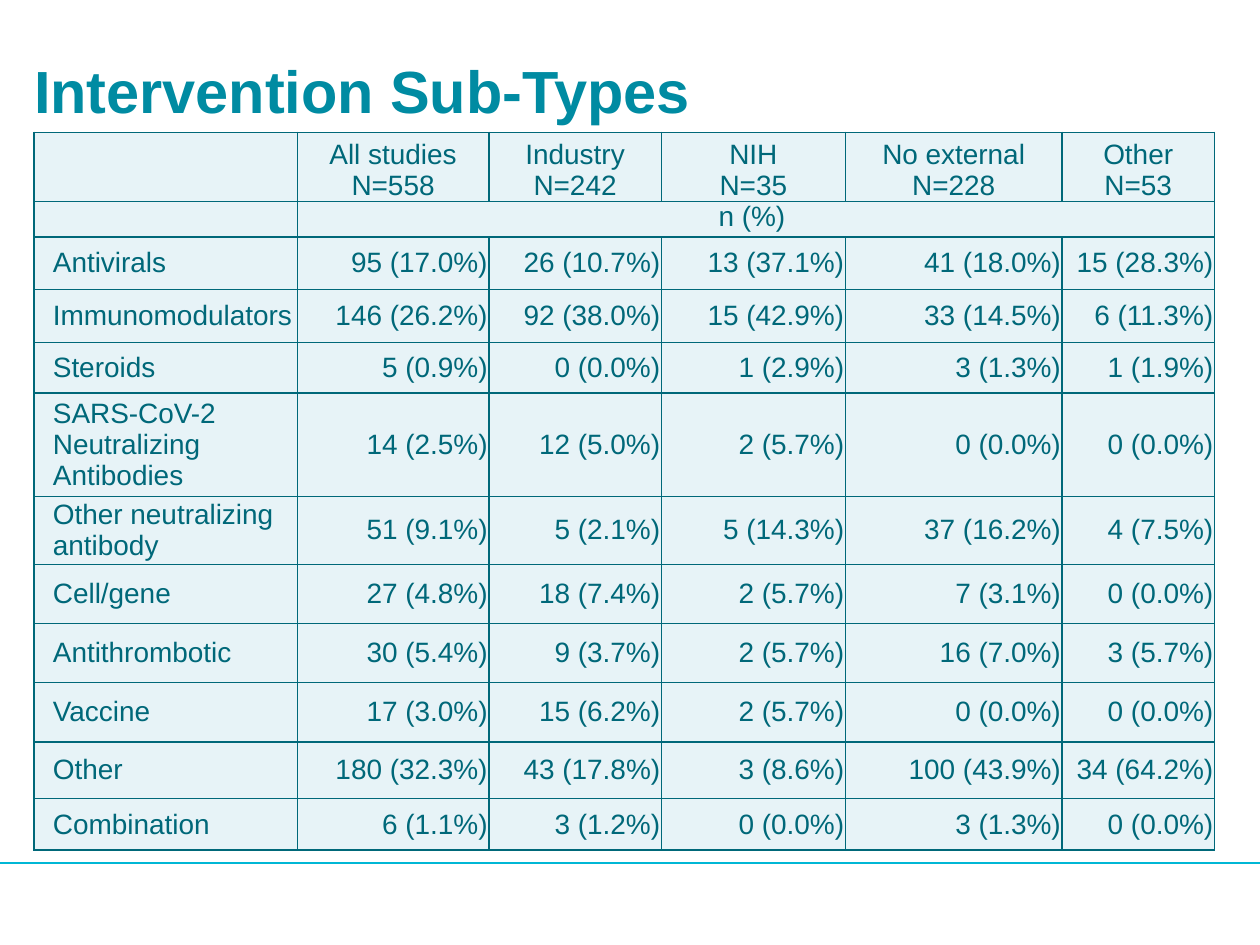
from lxml.etree import SubElement
from pptx import Presentation
from pptx.dml.color import RGBColor
from pptx.enum.shapes import MSO_CONNECTOR, MSO_SHAPE
from pptx.enum.text import MSO_ANCHOR, PP_ALIGN
from pptx.oxml import parse_xml
from pptx.oxml.ns import nsdecls, qn
from pptx.util import Inches, Pt

TITLE_COLOR, TEXT_COLOR = "008BA2", "006879"
CELL_COLOR, RULE_COLOR = "E7F3F7", "00B7D5"
COLUMN_WIDTHS = [2.09, 1.52, 1.37, 1.46, 1.72, 1.21]
ROW_HEIGHTS = [0.55, 0.28, 0.42, 0.42, 0.4, 0.82, 0.54, 0.47, 0.47, 0.47, 0.45, 0.41]
HEADERS = ["", "All studies\vN=558", "Industry\vN=242", "NIH\vN=35",
           "No external\vN=228", "Other\vN=53"]
UNIT = "n (%) "
STUDIES = [
    ["Antivirals", "95 (17.0%)", "26 (10.7%)", "13 (37.1%)", "41 (18.0%)", "15 (28.3%)"],
    ["Immunomodulators", "146 (26.2%)", "92 (38.0%)", "15 (42.9%)", "33 (14.5%)", "6 (11.3%)"],
    ["Steroids", "5 (0.9%)", "0 (0.0%)", "1 (2.9%)", "3 (1.3%)", "1 (1.9%)"],
    ["SARS-CoV-2 Neutralizing Antibodies",
     "14 (2.5%)", "12 (5.0%)", "2 (5.7%)", "0 (0.0%)", "0 (0.0%)"],
    ["Other neutralizing antibody",
     "51 (9.1%)", "5 (2.1%)", "5 (14.3%)", "37 (16.2%)", "4 (7.5%)"],
    ["Cell/gene", "27 (4.8%)", "18 (7.4%)", "2 (5.7%)", "7 (3.1%)", "0 (0.0%)"],
    ["Antithrombotic", "30 (5.4%)", "9 (3.7%)", "2 (5.7%)", "16 (7.0%)", "3 (5.7%)"],
    ["Vaccine", "17 (3.0%)", "15 (6.2%)", "2 (5.7%)", "0 (0.0%)", "0 (0.0%)"],
    ["Other", "180 (32.3%)", "43 (17.8%)", "3 (8.6%)", "100 (43.9%)", "34 (64.2%)"],
    ["Combination", "6 (1.1%)", "3 (1.2%)", "0 (0.0%)", "3 (1.3%)", "0 (0.0%)"],
]


def color(value):
    return RGBColor.from_string(value)


def style_font(font, size, value, bold=False):
    font.name = "Arial"
    font.size = Pt(size)
    font.bold = bold
    font.color.rgb = color(value)


def add_footer(page, left, top, width, height):
    band = page.shapes.add_shape(MSO_SHAPE.RECTANGLE, left, top, width, height)
    band.shadow.inherit = False
    band.fill.solid()
    band.fill.fore_color.rgb = color("FFFFFF")
    band.line.fill.background()
    rule_top = top + Inches(0.02)
    rule = page.shapes.add_connector(MSO_CONNECTOR.STRAIGHT, left, rule_top,
                                     left + width, rule_top)
    rule.line.color.rgb = color(RULE_COLOR)
    rule.line.width = Pt(0.75)
    SubElement(rule._element.spPr, qn("a:effectLst"))


def add_title(page, left, top, width, height):
    box = page.shapes.add_textbox(left, top, width, height)
    frame = box.text_frame
    frame.word_wrap = True
    frame.margin_left = frame.margin_right = frame.margin_bottom = 0
    frame.margin_top = Inches(0.05)
    frame.text = "Intervention Sub-Types"
    style_font(frame.paragraphs[0].runs[0].font, 34, TITLE_COLOR, bold=True)


def style_cell(cell):
    """Fill the cell, draw its four borders and tighten its margins."""
    cell.fill.solid()
    cell.fill.fore_color.rgb = color(CELL_COLOR)
    properties = cell._tc.get_or_add_tcPr()
    for index, side in enumerate("LRTB"):
        properties.insert(index, parse_xml(
            f'<a:ln{side} {nsdecls("a")} w="{Pt(1)}"><a:solidFill>'
            f'<a:srgbClr val="{TEXT_COLOR}"/></a:solidFill></a:ln{side}>'))
    cell.margin_left = cell.margin_right = Inches(0.01)
    cell.margin_top = cell.margin_bottom = 0


def write_cell(cell, text, align, anchor, indent=0):
    para = cell.text_frame.paragraphs[0]
    if not text:
        SubElement(para._p, qn("a:endParaRPr"), sz="1600")
        return
    para.text = text
    para.alignment = align
    para.space_before = para.space_after = Pt(1)
    if indent:
        para._p.get_or_add_pPr().set("marL", str(indent))
    for span in para.runs:
        style_font(span.font, 16, TEXT_COLOR)
    cell.vertical_anchor = anchor


def add_study_table(page, left, top, width, height):
    frame = page.shapes.add_table(len(ROW_HEIGHTS), len(COLUMN_WIDTHS),
                                  left, top, width, height)
    table = frame.table
    table.first_row = table.horz_banding = False
    for column, size in zip(table.columns, COLUMN_WIDTHS):
        column.width = Inches(size)
    for row, size in zip(table.rows, ROW_HEIGHTS):
        row.height = Inches(size)
    for cell in table.iter_cells():
        style_cell(cell)

    for column, text in enumerate(HEADERS):
        write_cell(table.cell(0, column), text, PP_ALIGN.CENTER, MSO_ANCHOR.BOTTOM)
    unit_cell = table.cell(1, 1)
    unit_cell.merge(table.cell(1, len(COLUMN_WIDTHS) - 1))
    write_cell(table.cell(1, 0), "", PP_ALIGN.LEFT, MSO_ANCHOR.TOP)
    write_cell(unit_cell, UNIT, PP_ALIGN.CENTER, MSO_ANCHOR.TOP)
    for row, (name, *counts) in enumerate(STUDIES, start=2):
        write_cell(table.cell(row, 0), name, PP_ALIGN.LEFT, MSO_ANCHOR.MIDDLE, Inches(0.14))
        for column, count in enumerate(counts, start=1):
            write_cell(table.cell(row, column), count, PP_ALIGN.RIGHT, MSO_ANCHOR.MIDDLE)


def main():
    deck = Presentation()
    deck.slide_width, deck.slide_height = Inches(10), Inches(7.5)
    page = deck.slides.add_slide(deck.slide_layouts[6])
    add_footer(page, 0, Inches(6.83), deck.slide_width, Inches(0.67))
    add_title(page, Inches(0.27), Inches(0.38), Inches(9.25), Inches(0.84))
    add_study_table(page, Inches(0.27), Inches(1.05), Inches(9.37), Inches(5.71))
    deck.save("out.pptx")


if __name__ == "__main__":
    main()
